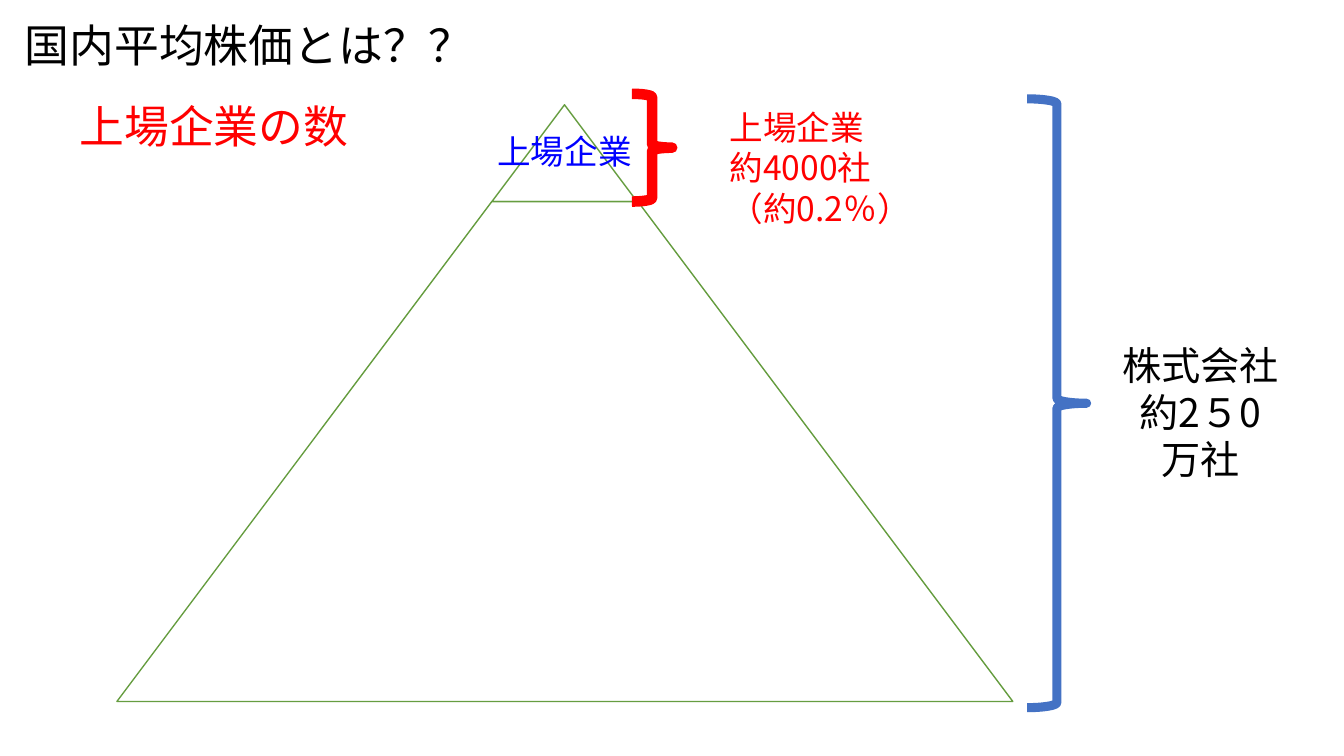
"""Build the slide showing listed companies as the tip of the company pyramid."""
from dataclasses import dataclass

from lxml import etree
from pptx import Presentation
from pptx import util as u
from pptx.dml.color import RGBColor
from pptx.enum import shapes, text
from pptx.oxml.ns import qn

FONT = "Noto Sans CJK JP"
RED, BLUE, BLACK, WHITE = "FF0000", "0000FF", "000000", "FFFFFF"
GREEN, BRACE_BLUE = "669D40", "4472C4"
LEFT, CENTER = text.PP_ALIGN.LEFT, text.PP_ALIGN.CENTER


@dataclass
class Box:
    left: float
    top: float
    width: float
    height: float

    def emu(self) -> list:
        return [u.Pt(v) for v in (self.left, self.top, self.width, self.height)]


@dataclass
class Outline:
    kind: shapes.MSO_SHAPE
    box: Box
    line: str
    weight: float
    fill: str = ""
    adjust: float = 0


@dataclass
class Label:
    box: Box
    lines: list[str]
    size: float
    color: str
    align: text.PP_ALIGN = LEFT


TIP = Box(351.4, 74.9, 103.7, 69.1)
BODY = Box(83.5, 144, 640, 357.1)
OUTLINES = [
    Outline(shapes.MSO_SHAPE.TRAPEZOID, TIP, GREEN, 1, WHITE, 0.75),
    Outline(shapes.MSO_SHAPE.TRAPEZOID, BODY, GREEN, 1, WHITE, 0.75),
    Outline(shapes.MSO_SHAPE.RIGHT_BRACE, Box(733.7, 70.6, 42.5, 434.9), BRACE_BLUE, 6.5),
    Outline(shapes.MSO_SHAPE.RIGHT_BRACE, Box(451.4, 67, 28.8, 77), RED, 7.5),
]
LABELS = [
    Label(Box(49.7, 67, 226.8, 46.1), ["上場企業の数"], 32, RED),
    Label(Box(785.5, 240.5, 144, 108.7), ["株式会社", "約2５0", "万社"], 28, BLACK, CENTER),
    Label(Box(514.1, 72.7, 147.6, 94.3), ["上場企業", "約4000社", "（約0.2％）"], 24, RED),
]
TIP_LABEL = Label(TIP, ["上場企業"], 24, BLUE, CENTER)
TITLE = Label(Box(0, 18, 355.7, 37.4), ["国内平均株価とは？？"], 32, BLACK, CENTER)


def rgb(color: str) -> RGBColor:
    return RGBColor.from_string(color)


def write(tf, label: Label) -> None:
    tf.word_wrap = True
    for i, line in enumerate(label.lines):
        p = tf.add_paragraph() if i else tf.paragraphs[0]
        p.alignment = label.align
        r = p.add_run()
        r.text = line
        r.font.size = u.Pt(label.size)
        r.font.color.rgb = rgb(label.color)
        r.font.name = FONT
        etree.SubElement(r.font._element, qn("a:ea"), typeface=FONT)


def add_outline(s, outline: Outline) -> None:
    sp = s.shapes.add_shape(outline.kind, *outline.box.emu())
    sp.shadow.inherit = False
    sp.line.color.rgb = rgb(outline.line)
    sp.line.width = u.Pt(outline.weight)
    if outline.adjust:
        sp.adjustments[0] = outline.adjust
    if outline.fill:
        sp.fill.solid()
        sp.fill.fore_color.rgb = rgb(outline.fill)
    else:
        sp.fill.background()


def add_label(s, label: Label):
    tf = s.shapes.add_textbox(*label.box.emu()).text_frame
    write(tf, label)
    tf.auto_size = text.MSO_AUTO_SIZE.SHAPE_TO_FIT_TEXT
    return tf


def add_tip_label(s, label: Label) -> None:
    tf = add_label(s, label)
    tf.auto_size = text.MSO_AUTO_SIZE.NONE
    tf.vertical_anchor = text.MSO_ANCHOR.MIDDLE
    tf.margin_left = tf.margin_right = tf.margin_top = tf.margin_bottom = u.Pt(2.4)
    p = tf.paragraphs[0]
    p.line_spacing = 0.9
    p.space_after = u.Pt(8.4)


def set_title(s, label: Label) -> None:
    sp = s.shapes.title
    sp.left, sp.top, sp.width, sp.height = label.box.emu()
    tf = sp.text_frame
    write(tf, label)
    tf.auto_size = text.MSO_AUTO_SIZE.NONE
    tf.vertical_anchor = text.MSO_ANCHOR.BOTTOM
    tf.paragraphs[0].line_spacing = 0.9


def main() -> None:
    prs = Presentation()
    prs.slide_width, prs.slide_height = u.Pt(960), u.Pt(540)
    s = prs.slides.add_slide(prs.slide_layouts[5])
    set_title(s, TITLE)
    for outline in OUTLINES:
        add_outline(s, outline)
    for label in LABELS:
        add_label(s, label)
    add_tip_label(s, TIP_LABEL)
    prs.save("out.pptx")


if __name__ == "__main__":
    main()
